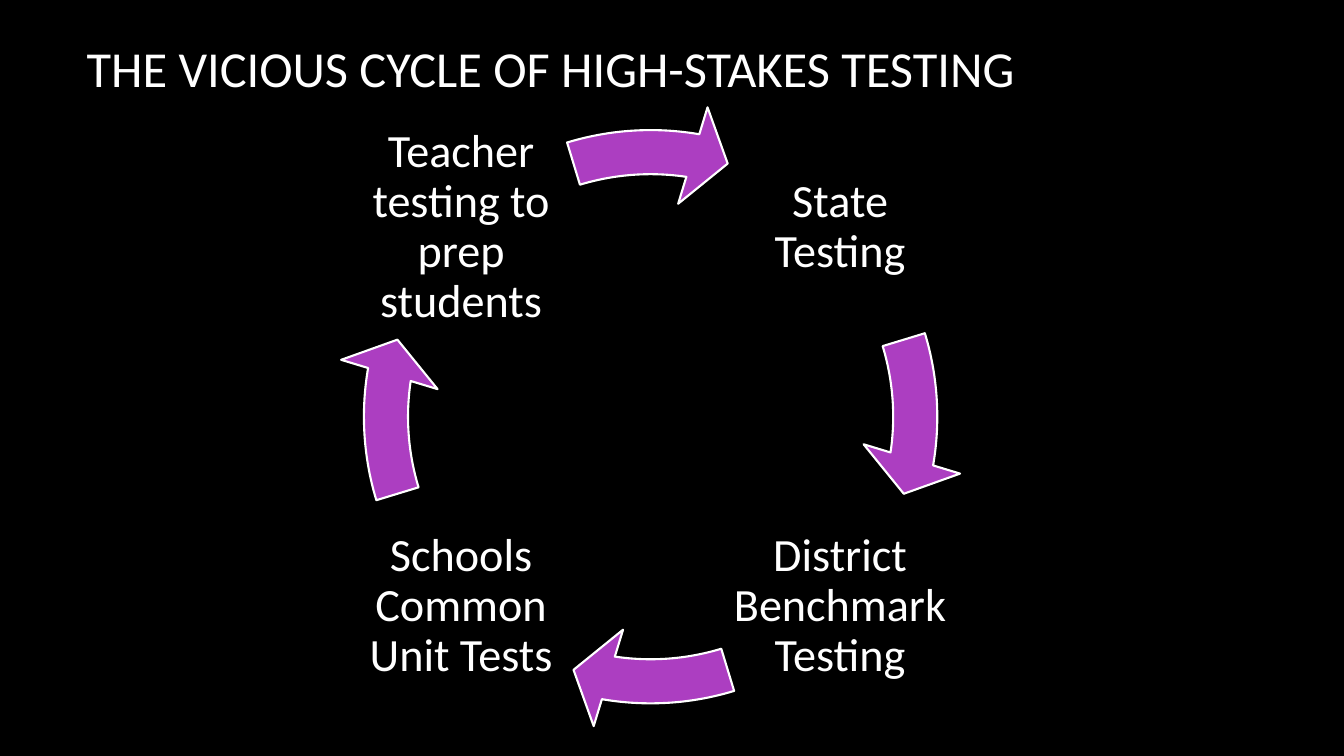
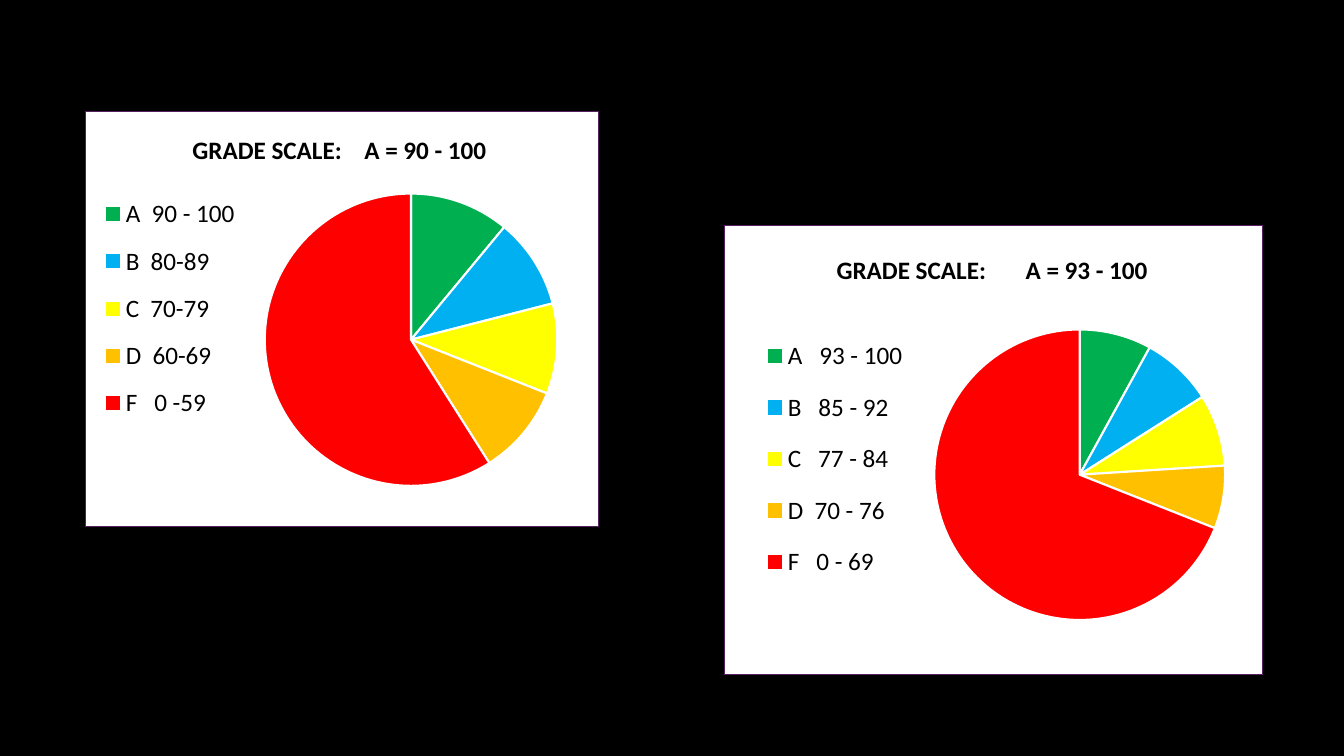
"""Build two slides: the testing cycle and a pair of grade scale pies."""
from lxml.etree import SubElement
from pptx import Presentation
from pptx.chart.data import CategoryChartData
from pptx.dml.color import RGBColor
from pptx.enum.chart import XL_CHART_TYPE, XL_LEGEND_POSITION
from pptx.enum.shapes import MSO_SHAPE
from pptx.enum.text import MSO_ANCHOR, PP_ALIGN
from pptx.oxml import parse_xml
from pptx.oxml.ns import nsdecls, qn
from pptx.util import Inches, Pt

FONT = "Calibri"
HUES = {"back": "000000", "text": "FFFFFF", "arrow": "AC3EC1", "card": "FFFFFF",
        "edge": "561F60", "ink": "000000"}
GRADES = ["00B050", "00B0F0", "FFFF00", "FFC000", "FF0000"]
TONE = {name: RGBColor.from_string(hue) for name, hue in HUES.items()}

deck = Presentation()
deck.slide_width, deck.slide_height = Inches(13.33), Inches(7.5)
back = deck.slide_master.background.fill
back.solid()
back.fore_color.rgb = TONE["back"]


def area(left, top, width, height):
    """Turn percentages of the slide into lengths."""
    wide, high = deck.slide_width / 100, deck.slide_height / 100
    return [round(v) for v in (left * wide, top * high, width * wide, height * high)]


def settle(part, index, **shares):
    """Fix a chart part at shares of its chart."""
    for old in part.findall(qn("c:layout")):
        part.remove(old)
    layout = parse_xml(f"<c:layout {nsdecls('c')}><c:manualLayout/></c:layout>")
    for tag, value in shares.items():
        SubElement(layout[0], qn(f"c:{tag}")).set("val", str(value))
    part.insert(index, layout)


cycle = deck.slides.add_slide(deck.slide_layouts[6])
MIDX, MIDY = 48.41, 55.13
STEPX, STEPY = 14.1, 25.07
BOXW, BOXH = 16.58, 29.47
RINGW, RINGH = 46.88, 83.33
steps = [("State Testing", 1, -1), ("District Benchmark Testing", 1, 1),
         ("Schools Common Unit Tests", -1, 1), ("Teacher testing to prep students", -1, -1)]
texts = [("THE VICIOUS CYCLE OF HIGH-STAKES TESTING", (6.07, 3.2, 82.4, 12.4),
          36, PP_ALIGN.LEFT)]
for text, across, down in steps:
    spot = (MIDX + across * STEPX - BOXW / 2, MIDY + down * STEPY - BOXH / 2, BOXW, BOXH)
    texts.append((text, spot, 33, PP_ALIGN.CENTER))

for text, spot, size, align in texts:
    frame = cycle.shapes.add_textbox(*area(*spot)).text_frame
    frame.word_wrap = True
    frame.vertical_anchor = MSO_ANCHOR.MIDDLE
    frame.margin_left = frame.margin_right = Inches(0.05)
    frame.margin_top = frame.margin_bottom = Inches(0.05)
    frame.text = text
    para = frame.paragraphs[0]
    para.alignment = align
    para.line_spacing = 0.9
    font = para.runs[0].font
    font.name, font.size, font.color.rgb = FONT, Pt(size), TONE["text"]

TURN = 216
for turn in range(0, TURN, TURN // len(steps)):
    arrow = cycle.shapes.add_shape(
        MSO_SHAPE.CIRCULAR_ARROW,
        *area(MIDX - RINGW / 2, MIDY - RINGH / 2, RINGW, RINGH))
    bends = (0.07, 4.65, 5.51 + turn, (205.84 + turn) % TURN, 0.08)
    for index, bend in enumerate(bends):
        arrow.adjustments[index] = bend
    arrow.shadow.inherit = False
    arrow.fill.solid()
    arrow.fill.fore_color.rgb = TONE["arrow"]
    arrow.line.color.rgb = TONE["text"]
    arrow.line.width = Pt(1.5)

scales = deck.slides.add_slide(deck.slide_layouts[6])
pies = [
    {"title": "GRADE SCALE:    A = 90 - 100", "spot": (6.3, 14.67, 38.26, 55.07),
     "bands": {"A  90 - 100": 11, "B  80-89": 10, "C  70-79": 10, "D  60-69": 10,
               "F   0 -59": 59},
     "head": (0.2, 0.04), "key": (0.02, 0.17, 0.29, 0.61),
     "plot": (0.35, 0.17, 0.57, 0.76)},
    {"title": "GRADE SCALE:       A = 93 - 100", "spot": (53.86, 29.73, 40.14, 59.6),
     "bands": {"A   93 - 100": 8, "B   85 - 92": 8, "C   77 - 84": 8, "D  70 - 76": 7,
               "F   0 - 69": 69},
     "head": (0.2, 0.05), "key": (0.06, 0.21, 0.29, 0.62),
     "plot": (0.39, 0.17, 0.54, 0.77)},
]
for pie in pies:
    data = CategoryChartData()
    data.categories = list(pie["bands"])
    data.add_series("Series 1", list(pie["bands"].values()))
    chart = scales.shapes.add_chart(XL_CHART_TYPE.PIE, *area(*pie["spot"]), data).chart
    chart.font.name, chart.font.size = FONT, Pt(10)
    chart.font.color.rgb = TONE["text"]

    chart.has_title = True
    title = chart.chart_title.text_frame
    title.text = pie["title"]
    chart.has_legend = True
    legend = chart.legend
    legend.position = XL_LEGEND_POSITION.LEFT
    legend.include_in_layout = False
    for font in (title.paragraphs[0].runs[0].font, legend.font):
        font.name, font.size, font.color.rgb = FONT, Pt(18), TONE["ink"]
        font.bold = font is not legend.font
    legend.font.bold = False

    plot = chart.plots[0]
    plot.vary_by_categories = True
    for index, hue in enumerate(GRADES):
        slice = plot.series[0].points[index].format
        slice.fill.solid()
        slice.fill.fore_color.rgb = RGBColor.from_string(hue)
        slice.line.color.rgb = TONE["card"]
        slice.line.width = Pt(1.5)

    root = chart.element.find(qn("c:chart"))
    modes = {"xMode": "edge", "yMode": "edge"}
    settle(root.find(qn("c:title")), 1, **modes, **dict(zip("xy", pie["head"])))
    settle(root.find(qn("c:legend")), 1, **modes, **dict(zip("xywh", pie["key"])))
    settle(root.find(qn("c:plotArea")), 0, layoutTarget="inner", **modes,
           **dict(zip("xywh", pie["plot"])))
    root.addprevious(parse_xml(f'<c:roundedCorners {nsdecls("c")} val="0"/>'))
    root.addnext(parse_xml(
        f'<c:spPr {nsdecls("c", "a")}>'
        f'<a:solidFill><a:srgbClr val="{HUES["card"]}"/></a:solidFill>'
        f'<a:ln w="{Pt(0.75)}"><a:solidFill><a:srgbClr val="{HUES["edge"]}"/></a:solidFill>'
        '</a:ln></c:spPr>'))

deck.save("out.pptx")
